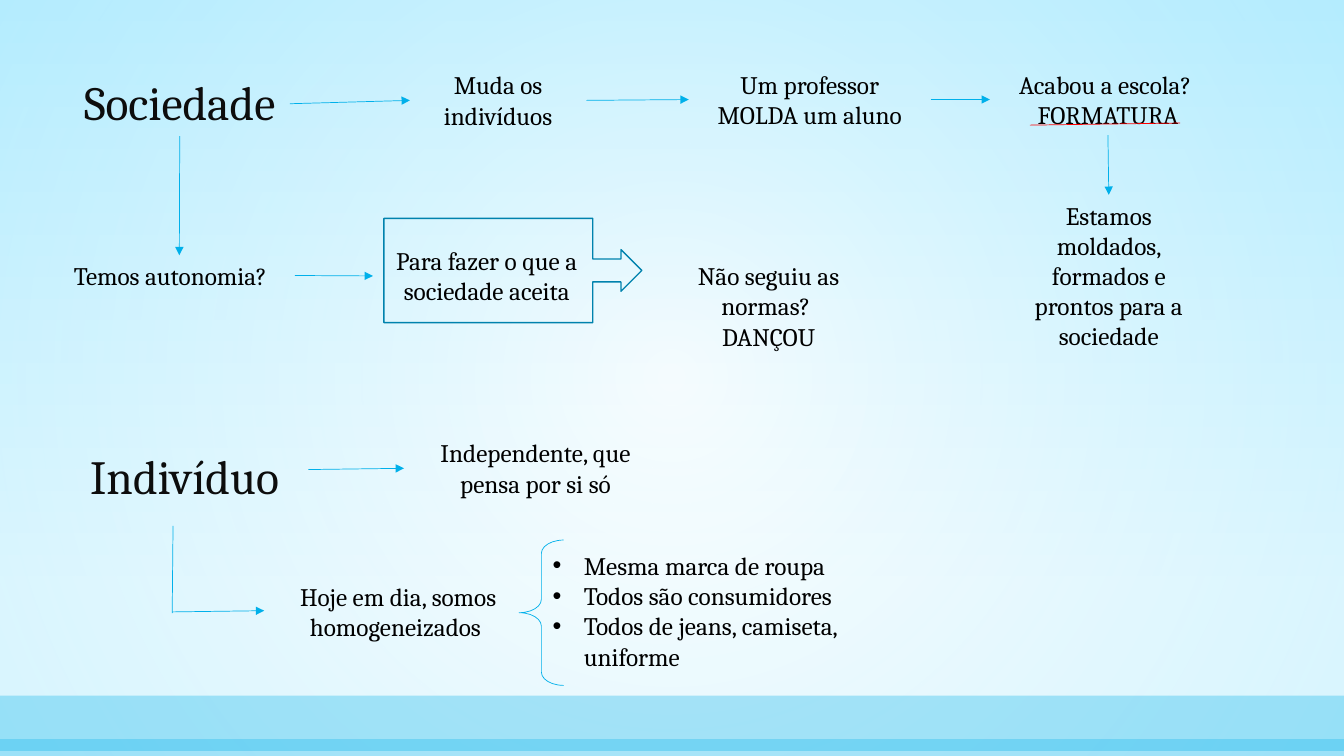
import pptx
import pptx.dml.color
import pptx.enum.dml
import pptx.enum.shapes
import pptx.enum.text
import pptx.oxml
import pptx.oxml.ns
import pptx.util

COLUMNS, ROWS = 160, 90
TOP, LEFT, BOTTOM, RIGHT = range(4)
SKY, DEEP, RED, INK, BLACK = "00B0EA", "0082AD", "FF0000", "0D0D0D", "000000"
GEOMETRY = pptx.enum.shapes.MSO_SHAPE
CENTER = pptx.enum.text.PP_ALIGN.CENTER
BODY = {
    "font": {"name": "Cambria", "size": pptx.util.Pt(18)},
    "paragraph": {"alignment": CENTER},
    "frame": {"word_wrap": True, "auto_size": pptx.enum.text.MSO_AUTO_SIZE.SHAPE_TO_FIT_TEXT},
}
HEADING = {
    "font": {"name": "Cambria", "size": pptx.util.Pt(34)},
    "paragraph": {"alignment": CENTER, "line_spacing": 0.9},
    "frame": {"word_wrap": True, "vertical_anchor": pptx.enum.text.MSO_ANCHOR.BOTTOM},
}


def rgb(value):
    """Turn a hex string into a colour."""
    return pptx.dml.color.RGBColor.from_string(value)


def apply(target, values):
    """Set every format value on the target."""
    for name, value in values.items():
        setattr(target, name, value)


def element(tag, inner="", **attributes):
    """Build one drawing element."""
    listed = "".join(f' {name}="{value}"' for name, value in attributes.items())
    return pptx.oxml.parse_xml(
        f'<a:{tag} {pptx.oxml.ns.nsdecls("a")}{listed}>{inner}</a:{tag}>')


class ConceptMap:
    """Hold the style and the current slide of a concept map."""

    def __init__(self, deck):
        """Add a blank slide to the deck."""
        self.slide = deck.slides.add_slide(deck.slide_layouts[6])
        self.shapes = self.slide.shapes
        self.cell_width = deck.slide_width / COLUMNS
        self.cell_height = deck.slide_height / ROWS

    def place(self, *lengths):
        """Turn alternating columns and rows into slide lengths."""
        cells = (self.cell_width, self.cell_height)
        return [round(length * cells[i % 2]) for i, length in enumerate(lengths)]

    def gradient(self, owner, fill, stops, radial=False):
        """Fill with (position, colour, opacity) stops, downwards or from the centre."""
        fill.gradient()
        fill.gradient_angle = 270
        gradient = next(owner.iter(pptx.oxml.ns.qn("a:gradFill")))
        listed = "".join(
            f'<a:gs pos="{position * 1000}"><a:srgbClr val="{colour}">'
            f'<a:alpha val="{opacity * 1000}"/></a:srgbClr></a:gs>'
            for position, colour, opacity in stops)
        gradient.replace(gradient.find(pptx.oxml.ns.qn("a:gsLst")), element("gsLst", listed))
        if radial:
            centre = '<a:fillToRect l="50000" t="50000" r="50000" b="50000"/>'
            gradient.replace(gradient.find(pptx.oxml.ns.qn("a:lin")),
                             element("path", centre, path="circle"))

    def panel(self, box):
        """Add a rectangle without an outline."""
        panel = self.shapes.add_shape(GEOMETRY.RECTANGLE, *self.place(*box))
        panel.shadow.inherit = False
        panel.line.fill.background()
        return panel

    def band(self, box, opacity):
        """Add a translucent band."""
        band = self.panel(box)
        band.fill.solid()
        band.fill.fore_color.rgb = rgb(SKY)
        colour = next(band.element.spPr.iter(pptx.oxml.ns.qn("a:srgbClr")))
        colour.append(element("alpha", val=opacity * 1000))

    def outline(self, geometry, box, adjustments, colour, weight):
        """Add an unfilled preset shape."""
        outline = self.shapes.add_shape(geometry, *self.place(*box))
        outline.shadow.inherit = False
        outline.fill.background()
        outline.line.color.rgb = rgb(colour)
        outline.line.width = pptx.util.Pt(weight)
        for index, adjustment in enumerate(adjustments):
            outline.adjustments[index] = adjustment

    def text(self, box, *lines, style=BODY, colour=BLACK, centred=True, bullets=False):
        """Add a text box with one paragraph a line."""
        label = self.shapes.add_textbox(*self.place(*box))
        frame = label.text_frame
        apply(frame, style["frame"])
        frame.text = "\n".join(lines)
        for paragraph in frame.paragraphs:
            if centred:
                apply(paragraph, style["paragraph"])
            font = paragraph.runs[0].font
            apply(font, style["font"])
            font.color.rgb = rgb(colour)
            if bullets:
                indent = pptx.util.Inches(0.31)
                properties = paragraph.runs[0].font._element.getparent().getparent().get_or_add_pPr()
                properties.set("marL", str(indent))
                properties.set("indent", str(-indent))
                properties.append(element("buFont", typeface="Arial"))
                properties.append(element("buChar", char="•"))
        return label

    def line(self, start, end, colour=SKY, arrow=True):
        """Join two ends, each a grid point or a box and its side."""
        joined = [hasattr(tip[0], "shape_id") for tip in (start, end)]
        points = [(0, 0) if tied else tip for tied, tip in zip(joined, (start, end))]
        line = self.shapes.add_connector(
            pptx.enum.shapes.MSO_CONNECTOR.STRAIGHT, *self.place(*points[0], *points[1]))
        if joined[0]:
            line.begin_connect(*start)
        if joined[1]:
            line.end_connect(*end)
        line.line.color.rgb = rgb(colour)
        line.line.width = pptx.util.Pt(0.5)
        if arrow:
            line.line._get_or_add_ln().append(element("tailEnd", type="triangle"))
        line._element.spPr.append(element("effectLst"))


def draw_backdrop(concept):
    """Draw the background and the bands at the foot."""
    concept.gradient(concept.slide.element, concept.slide.background.fill,
                     [(0, "C8F1FF", 56), (79, "FFFFFF", 100)])
    glow = concept.panel((0, 0, COLUMNS, ROWS))
    concept.gradient(glow.element.spPr, glow.fill,
                     [(0, "FFFFFF", 49), (100, "91E4FF", 35)], radial=True)
    concept.band((0, 82.8, COLUMNS, 6.6), 30)
    concept.band((0, 88, COLUMNS, 2), 28)


def draw_society(concept):
    """Draw the branch about society."""
    society = concept.text((7.3, 7.7, 28.2, 8.5), "Sociedade", style=HEADING, colour=INK)
    change = concept.text((48.8, 7.7, 21, 8.5), "Muda os indivíduos")
    teacher = concept.text((82, 7.6, 28.8, 8.5), "Um professor MOLDA um aluno")
    school = concept.text((119.5, 7.6, 24.8, 8.5), "Acabou a escola? ", "FORMATURA")
    moulded = concept.text((120.4, 23.2, 23.2, 19.4),
                           "Estamos moldados, formados e prontos para a sociedade")
    autonomy = concept.text((7.6, 30.4, 27.5, 4.8), "Temos autonomia?", centred=False)
    accepted = concept.text((44.4, 28.6, 27.1, 8.5), "Para fazer o que a sociedade aceita")
    concept.outline(GEOMETRY.RIGHT_ARROW_CALLOUT, (45.7, 26, 30.7, 12.4),
                    (0.22, 0.2, 0.2, 0.81), DEEP, 1)
    concept.text((78.1, 30.4, 26.8, 12.1), "Não seguiu as normas? ", "DANÇOU")
    concept.line((34.5, 12.35), (change, LEFT))
    concept.line((change, RIGHT), (teacher, LEFT))
    concept.line((teacher, RIGHT), (117.85, 11.85))
    concept.line((122.6, 14.9), (140.5, 14.65), RED, arrow=False)
    concept.line((school, BOTTOM), (moulded, TOP))
    concept.line((society, BOTTOM), (autonomy, TOP))
    concept.line((autonomy, RIGHT), (accepted, LEFT))


def draw_individual(concept):
    """Draw the branch about the individual."""
    individual = concept.text((8.5, 51.1, 28.2, 9.6), "Indivíduo ", style=HEADING, colour=INK)
    independent = concept.text((48.1, 51.5, 31.3, 8.5), "Independente, que pensa por si só")
    concept.line((individual, RIGHT), (independent, LEFT))
    concept.line((20.6, 62.6), (20.5, 73), arrow=False)
    concept.line((20.5, 72.85), (31.45, 72.7))
    concept.text((32.9, 68.6, 29, 8.5), "Hoje em dia, somos homogeneizados ")
    concept.outline(GEOMETRY.LEFT_BRACE, (61.8, 64.3, 5.3, 17.3), (0.3, 0.5), SKY, 0.5)
    concept.text((64.6, 64.9, 40.4, 15.7), "Mesma marca de roupa", "Todos são consumidores",
                 "Todos de jeans, camiseta, uniforme", centred=False, bullets=True)


def main():
    """Build and save the slide."""
    deck = pptx.Presentation()
    apply(deck, {"slide_width": pptx.util.Inches(13.33), "slide_height": pptx.util.Inches(7.5)})
    concept = ConceptMap(deck)
    draw_backdrop(concept)
    draw_society(concept)
    draw_individual(concept)
    deck.save("out.pptx")


if __name__ == "__main__":
    main()
